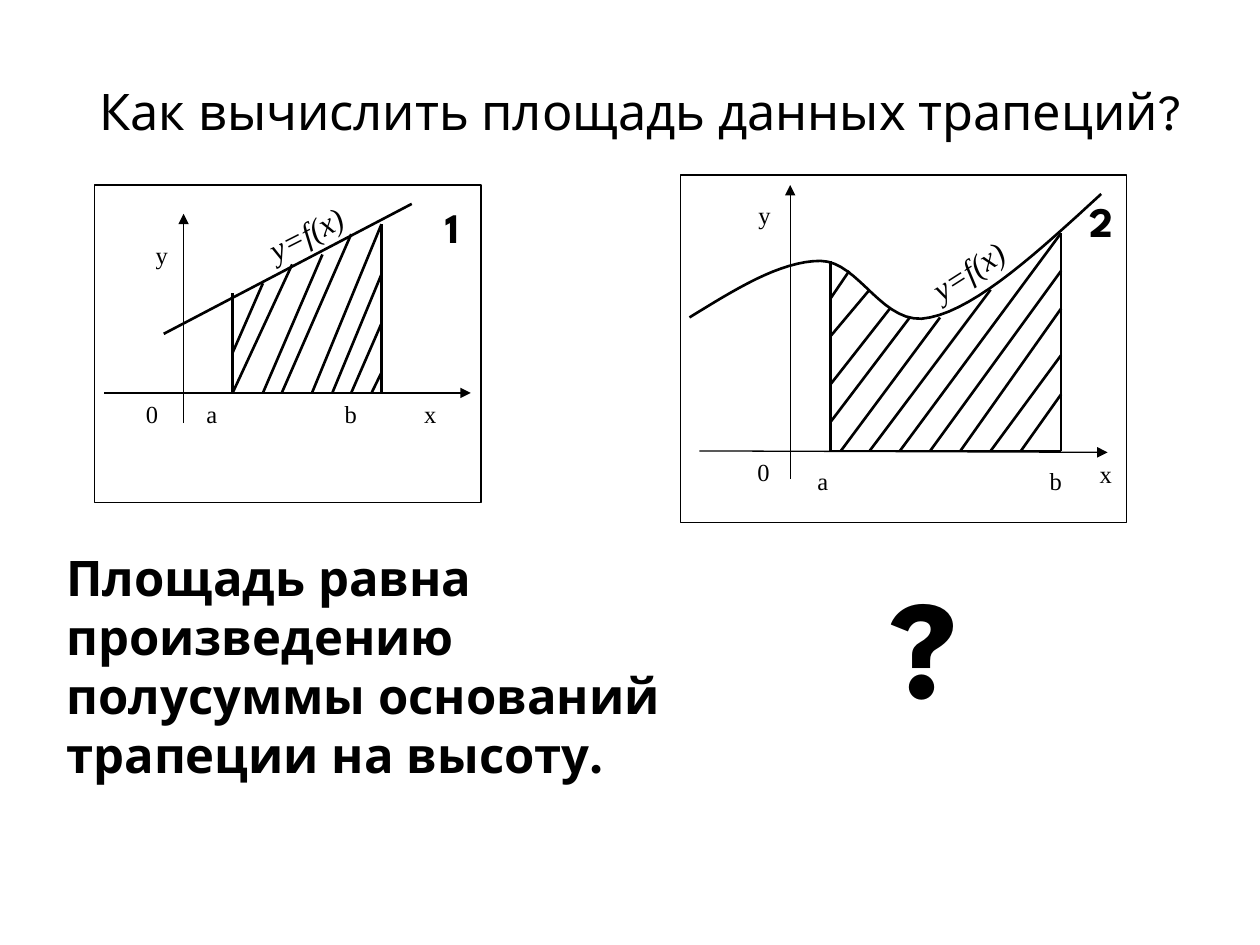
from lxml import etree
from pptx import Presentation
from pptx.dml.color import RGBColor
from pptx.enum.shapes import MSO_CONNECTOR, MSO_SHAPE
from pptx.enum.text import MSO_ANCHOR, PP_ALIGN
from pptx.oxml.ns import qn
from pptx.util import Cm, Pt

STRAIGHT = MSO_CONNECTOR.STRAIGHT
RECTANGLE = MSO_SHAPE.RECTANGLE
MIDDLE = MSO_ANCHOR.MIDDLE
CENTER = PP_ALIGN.CENTER
TITLE_ONLY = 5
HEADING_FONT = "League Spartan"
MATH_FONT = "Times New Roman"
BLACK = "000000"
WHITE = "FFFFFF"
THIN, THICK = 0.75, 1.5

LINEAR = {
    "number": ("1", 6.83, 0.2),
    "formula": (3.2, 0.38, 333.1),
    "axes": [(1.8, 4.8, 1.8, 0.58), (0.2, 4.19, 7.59, 4.19)],
    "graph": [(1.4, 3), (6.4, 0.38)],
    "base": 4.19,
    "sides": [(2.79, 2.18), (5.79, 0.79)],
    "hatching": [
        (5.79, 0.79, 4.39, 4.19), (5.79, 1.8, 4.8, 4.19),
        (5.79, 2.79, 5.18, 4.19), (5.79, 3.78, 5.59, 4.19),
        (5.18, 0.99, 3.78, 4.19), (4.6, 1.4, 3.4, 4.19),
        (3.99, 1.6, 2.79, 4.19), (3.4, 1.98, 2.79, 3.38),
    ],
    "labels": [("y", 0.99, 0.99), ("0", 0.79, 4.19), ("а", 2.01, 4.19),
               ("b", 4.8, 4.19), ("x", 6.4, 4.19)],
}
CURVED = {
    "number": ("2", 8, 0.28),
    "formula": (4.72, 1.32, 327.5),
    "axes": [(2.21, 6.12, 2.21, 0.2), (0.38, 5.56, 8.61, 5.59)],
    "graph": [(0.18, 2.87), (1.09, 2.31), (2.01, 1.73), (2.82, 1.73),
              (3.61, 1.73), (4.09, 3.1), (5.03, 2.87), (5.99, 2.67),
              (7.24, 1.52), (8.48, 0.38)],
    "base": 5.56,
    "sides": [(3.02, 1.73), (7.67, 1.17)],
    "hatching": [
        (7.67, 1.17, 4.42, 5.56), (7.67, 1.93, 5.03, 5.56),
        (7.67, 2.69, 5.64, 5.56), (7.67, 3.63, 6.25, 5.56),
        (7.67, 4.42, 6.86, 5.56), (6.25, 2.31, 3.81, 5.56),
        (5.23, 2.87, 3.23, 5.56), (4.62, 2.87, 3.02, 4.98),
        (4.22, 2.69, 3.02, 4.22), (3.81, 2.31, 3.02, 3.25),
        (3.4, 1.93, 3.02, 2.49),
    ],
    "labels": [("y", 1.32, 0.38), ("0", 1.3, 5.56), ("а", 2.51, 5.74),
               ("b", 7.19, 5.74), ("x", 8.2, 5.59)],
}


def color(value):
    return RGBColor.from_string(value)


def format_font(font, name, size, bold=False, italic=False):
    font.name = name
    font.size = Pt(size)
    font.bold = bold
    font.italic = italic
    font.color.rgb = color(BLACK)


def add_text(shapes, lines, box, name, size, bold=False, italic=False):
    shape = shapes.add_textbox(*(Cm(length) for length in box))
    frame = shape.text_frame
    frame.word_wrap = True
    frame.text = "\n".join(lines)
    for paragraph in frame.paragraphs:
        format_font(paragraph.font, name, size, bold, italic)
    return shape


def add_line(shapes, origin, ends, width, arrow=False):
    left, top = origin
    x1, y1, x2, y2 = ends
    connector = shapes.add_connector(STRAIGHT, Cm(left + x1), Cm(top + y1),
                                     Cm(left + x2), Cm(top + y2))
    connector.line.color.rgb = color(BLACK)
    connector.line.width = Pt(width)
    if arrow:
        line = connector.line._get_or_add_ln()
        etree.SubElement(line, qn("a:tailEnd"), type="triangle")
    etree.SubElement(connector._element.spPr, qn("a:effectLst"))


def curve_points(controls, steps=16):
    points = [controls[0]]
    for start in range(0, len(controls) - 1, 3):
        segment = controls[start:start + 4]
        for step in range(1, steps + 1):
            t = step / steps
            weights = ((1 - t) ** 3, 3 * t * (1 - t) ** 2,
                       3 * t ** 2 * (1 - t), t ** 3)
            points.append(tuple(sum(weight * point[axis] for weight, point
                                    in zip(weights, segment))
                                for axis in (0, 1)))
    return points


def add_curve(shapes, origin, controls):
    left, top = origin
    first, *rest = [(Cm(left + x), Cm(top + y))
                    for x, y in curve_points(controls)]
    builder = shapes.build_freeform(*first)
    builder.add_line_segments(rest, close=False)
    curve = builder.convert_to_shape()
    curve.shadow.inherit = False
    curve.fill.background()
    curve.line.color.rgb = color(BLACK)
    curve.line.width = Pt(THICK)


def add_graph_panel(slide, box, graph):
    left, top = origin = box[:2]
    shapes = slide.shapes.add_group_shape().shapes
    frame = shapes.add_shape(RECTANGLE, *(Cm(length) for length in box))
    frame.shadow.inherit = False
    frame.fill.solid()
    frame.fill.fore_color.rgb = color(WHITE)
    frame.line.color.rgb = color(BLACK)
    frame.line.width = Pt(THIN)

    for axis in graph["axes"]:
        add_line(shapes, origin, axis, THIN, arrow=True)
    if len(graph["graph"]) == 2:
        start, end = graph["graph"]
        add_line(shapes, origin, start + end, THICK)
    else:
        add_curve(shapes, origin, graph["graph"])

    base = graph["base"]
    (a, a_top), (b, b_top) = graph["sides"]
    outline = [(a, a_top, a, base), (b, b_top, b, base), (a, base, b, base)]
    for ends in outline + graph["hatching"]:
        add_line(shapes, origin, ends, THICK)

    for label, x, y in graph["labels"]:
        add_text(shapes, [label], (left + x, top + y, 0.97, 0.84),
                 MATH_FONT, 14)
    x, y, rotation = graph["formula"]
    formula = add_text(shapes, ["y=f(x)"], (left + x, top + y, 2.44, 1.02),
                       MATH_FONT, 18, italic=True)
    formula.rotation = rotation
    number, x, y = graph["number"]
    add_text(shapes, [number], (left + x, top + y, 0.86, 1.27),
             HEADING_FONT, 24, bold=True)


def add_title(slide, box):
    title = slide.shapes.title
    title.left, title.top, title.width, title.height = map(Cm, box)
    frame = title.text_frame
    frame.text = "Как вычислить площадь данных трапеций?"
    frame.margin_left = frame.margin_right = 0
    frame.vertical_anchor = MIDDLE
    paragraph = frame.paragraphs[0]
    paragraph.alignment = CENTER
    format_font(paragraph.font, HEADING_FONT, 28.8)


def main():
    presentation = Presentation()
    presentation.slide_width, presentation.slide_height = Cm(25.4), Cm(19.05)
    slide = presentation.slides.add_slide(
        presentation.slide_layouts[TITLE_ONLY])
    add_title(slide, (1.7, 1.12, 22.43, 2.21))
    add_graph_panel(slide, (1.9, 3.73, 7.8, 6.4), LINEAR)
    add_graph_panel(slide, (13.72, 3.53, 8.99, 7.01), CURVED)
    add_text(slide.shapes,
             ["Площадь равна произведению", "полусуммы оснований",
              "трапеции на высоту."],
             (1.09, 10.92, 14.15, 3.81), HEADING_FONT, 28, bold=True)
    add_text(slide.shapes, ["?"], (17.7, 11.13, 1.8, 3.63),
             HEADING_FONT, 80, bold=True)
    presentation.save("out.pptx")


if __name__ == "__main__":
    main()
